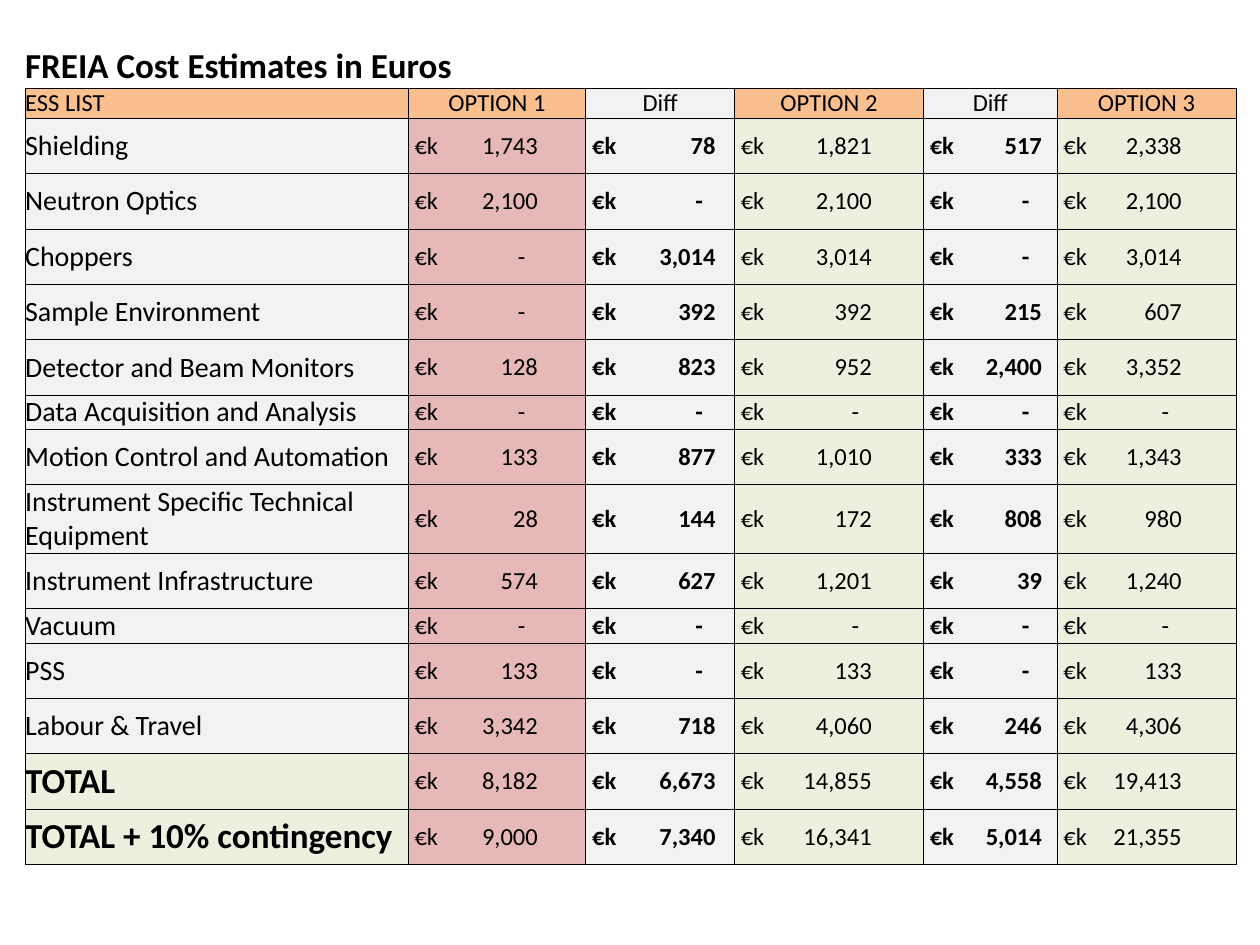
from lxml import etree
from pptx import Presentation
from pptx.dml.color import RGBColor
from pptx.enum.text import MSO_ANCHOR, PP_ALIGN
from pptx.oxml.ns import qn
from pptx.util import Inches, Pt

MIDDLE, BOTTOM = MSO_ANCHOR.MIDDLE, MSO_ANCHOR.BOTTOM
LEFT, CENTER = PP_ALIGN.LEFT, PP_ALIGN.CENTER
COLORS = {"text": "000000", "head": "FABF8F", "gray": "F2F2F2",
          "red": "E6B8B7", "green": "EBF1DE"}

HEADS = ["ESS LIST", "OPTION 1", "Diff", "OPTION 2", "Diff", "OPTION 3"]
COSTS = [
    ("Shielding", "1,743", "78", "1,821", "517", "2,338"),
    ("Neutron Optics", "2,100", "-", "2,100", "-", "2,100"),
    ("Choppers", "-", "3,014", "3,014", "-", "3,014"),
    ("Sample Environment", "-", "392", "392", "215", "607"),
    ("Detector and Beam Monitors", "128", "823", "952", "2,400", "3,352"),
    ("Data Acquisition and Analysis", "-", "-", "-", "-", "-"),
    ("Motion Control and Automation", "133", "877", "1,010", "333", "1,343"),
    ("Instrument Specific Technical Equipment",
     "28", "144", "172", "808", "980"),
    ("Instrument Infrastructure", "574", "627", "1,201", "39", "1,240"),
    ("Vacuum", "-", "-", "-", "-", "-"),
    ("PSS", "133", "-", "133", "-", "133"),
    ("Labour & Travel", "3,342", "718", "4,060", "246", "4,306"),
    ("TOTAL", "8,182", "6,673", "14,855", "4,558", "19,413"),
    ("TOTAL + 10% contingency", "9,000", "7,340", "16,341", "5,014", "21,355"),
]
WIDTHS = [3.04, 1.41, 1.18, 1.5, 1.06, 1.42]
FILLS = ["gray", "red", "gray", "green", "gray", "green"]
TABS = [0, 0.98, 0.98, 1.04, 0.89, 0.94]  # right edge of the numbers
INDENT = 0.05
DASH = 0.1  # a dash stands this far inside the right edge
LOW = ("Data Acquisition and Analysis", "Vacuum")


def frame(cell, sides, fill=None):
    """Draw thin lines on the given sides, clear the rest, then fill."""
    props = cell._tc.get_or_add_tcPr()
    for side in "LRTB":
        line = etree.SubElement(props, qn("a:ln" + side), w=str(Pt(0.5)))
        if side in sides:
            paint = etree.SubElement(line, qn("a:solidFill"))
            etree.SubElement(paint, qn("a:srgbClr"), val=COLORS["text"])
        else:
            etree.SubElement(line, qn("a:noFill"))
    if fill:
        cell.fill.solid()
        cell.fill.fore_color.rgb = RGBColor.from_string(COLORS[fill])
    else:
        cell.fill.background()


def write(cell, text, size, bold=False, anchor=MIDDLE, align=LEFT, indent=0):
    cell.margin_left = Inches(indent)
    cell.margin_right = cell.margin_top = cell.margin_bottom = 0
    cell.vertical_anchor = anchor
    para = cell.text_frame.paragraphs[0]
    para.alignment = align
    run = para.add_run()
    run.text = text
    run.font.name = "Calibri"
    run.font.size = Pt(size)
    run.font.bold = bold
    run.font.color.rgb = RGBColor.from_string(COLORS["text"])
    return para


deck = Presentation()
deck.slide_width, deck.slide_height = Inches(10), Inches(7.5)
slide = deck.slides.add_slide(deck.slide_layouts[6])

# Table grid
heights = [0.29, 0.23] + [0.23 if row[0] in LOW else 0.44 for row in COSTS]
table = slide.shapes.add_table(
    len(heights), len(WIDTHS), Inches(0.2), Inches(0.36),
    Inches(sum(WIDTHS)), Inches(sum(heights))).table
table.first_row = table.horz_banding = False
for col, width in zip(table.columns, WIDTHS):
    col.width = Inches(width)
for row, height in zip(table.rows, heights):
    row.height = Inches(height)

# Title row, open at the top and sides
for c in range(len(WIDTHS)):
    frame(table.cell(0, c), "B")
table.cell(0, 0).merge(table.cell(0, 4))
write(table.cell(0, 0), "FREIA Cost Estimates in Euros", 20, True, BOTTOM)
write(table.cell(0, 5), "", 14)

# Column heads
for c, head in enumerate(HEADS):
    cell = table.cell(1, c)
    frame(cell, "LRTB", "gray" if head == "Diff" else "head")
    write(cell, head, 14, anchor=BOTTOM, align=CENTER if c else LEFT)

# Cost rows: item name, then the amounts set on a right tab
for r, (item, *sums) in enumerate(COSTS, 2):
    total = item.startswith("TOTAL")
    cell = table.cell(r, 0)
    frame(cell, "LRTB", "green" if total else FILLS[0])
    write(cell, item, 20 if total else 16, total)
    for c, value in enumerate(sums, 1):
        cell = table.cell(r, c)
        frame(cell, "LRTB", FILLS[c])
        para = write(cell, "€k\t" + value, 14, HEADS[c] == "Diff",
                     indent=INDENT)
        stop = TABS[c] - (DASH if value == "-" else 0)
        tabs = etree.SubElement(para._p.get_or_add_pPr(), qn("a:tabLst"))
        etree.SubElement(tabs, qn("a:tab"), pos=str(Inches(stop)), algn="r")

deck.save("out.pptx")
